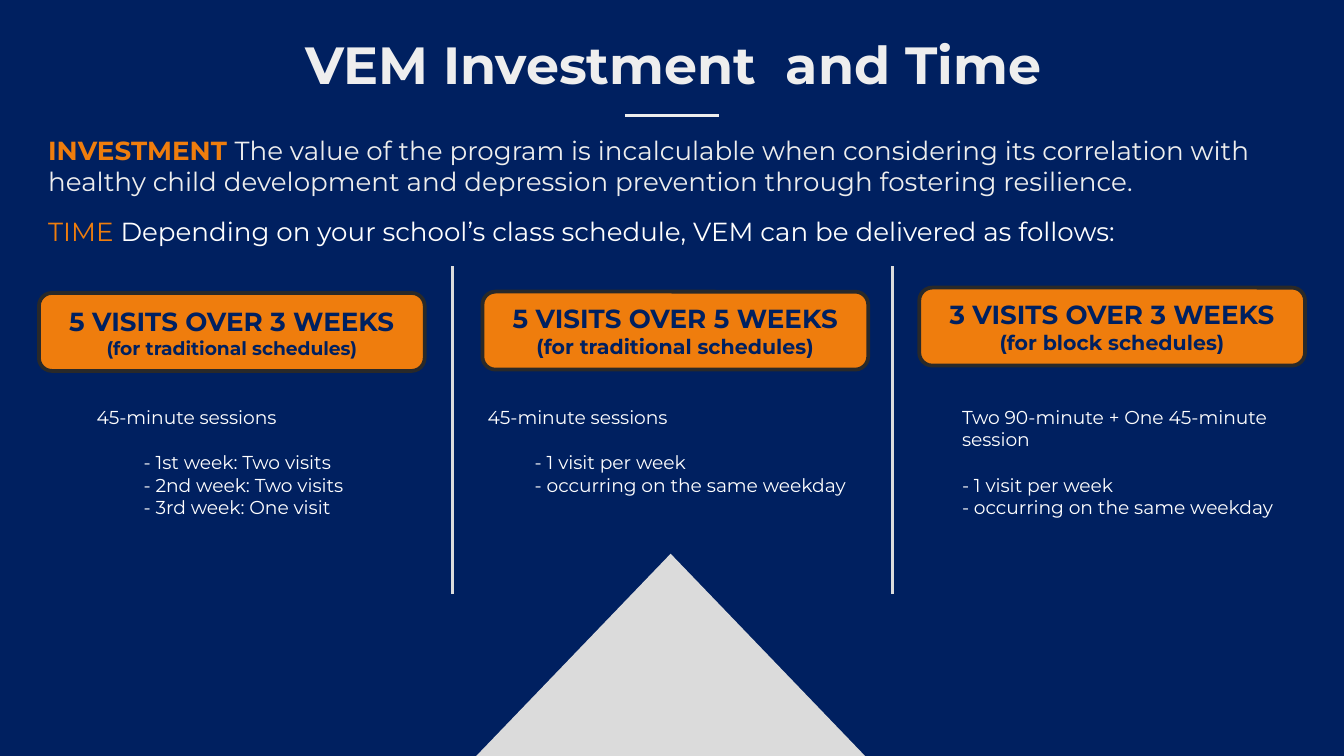
from pptx import Presentation
from pptx.dml.color import RGBColor
from pptx.enum.shapes import MSO_CONNECTOR, MSO_SHAPE
from pptx.enum.text import MSO_ANCHOR, MSO_AUTO_SIZE, PP_ALIGN
from pptx.oxml.ns import qn
from pptx.util import Pt
from lxml import etree

NAVY = RGBColor(0x00, 0x20, 0x60)
ORANGE = RGBColor(0xEF, 0x7D, 0x0D)
CHARCOAL = RGBColor(0x29, 0x29, 0x29)
SILVER = RGBColor(0xDB, 0xDB, 0xDB)
OFF_WHITE = RGBColor(0xEE, 0xEE, 0xEE)
WHITE = RGBColor(0xFF, 0xFF, 0xFF)

FONT = "Montserrat"
CENTER = PP_ALIGN.CENTER
LEFT = PP_ALIGN.LEFT
TOP = MSO_ANCHOR.TOP
MIDDLE = MSO_ANCHOR.MIDDLE
NO_AUTOFIT = MSO_AUTO_SIZE.NONE
STRAIGHT = MSO_CONNECTOR.STRAIGHT
TRIANGLE = MSO_SHAPE.ISOSCELES_TRIANGLE
ROUNDED = MSO_SHAPE.ROUNDED_RECTANGLE

INSET = 7.2
BODY_TOP = 210.24
BODY_HEIGHT = 59.04
BODY_INDENT = 10.8
ITEM_INDENT = 36
SECTION_GAP = 12.2

SCHEDULES = [
    {"badge": (20.88, 156.96), "heading": "5 VISITS OVER 3 WEEKS",
     "note": "(for traditional schedules)", "note_size": 10,
     "body": (33.84, 190.8), "item_indent": ITEM_INDENT,
     "sessions": ["45-minute sessions"],
     "items": ["- 1st week: Two visits", "- 2nd week: Two visits",
               "- 3rd week: One visit"]},
    {"badge": (258.48, 156.24), "heading": "5 VISITS OVER 5 WEEKS",
     "note": "(for traditional schedules)", "note_size": 11,
     "body": (243.36, 222.48), "item_indent": ITEM_INDENT,
     "sessions": ["45-minute sessions"],
     "items": ["- 1 visit per week", "- occurring on the same weekday"]},
    {"badge": (492.48, 154.08), "heading": "3 VISITS OVER 3 WEEKS",
     "note": "(for block schedules)", "note_size": 11,
     "body": (497.52, 206.64), "item_indent": BODY_INDENT,
     "sessions": ["Two 90-minute + One 45-minute", "session"],
     "items": ["- 1 visit per week", "- occurring on the same weekday"]},
]


def style_font(font, size, color, bold=False):
    font.name = FONT
    font.size = Pt(size)
    font.bold = bold
    font.color.rgb = color


def setup_frame(tf, anchor=TOP, vertical_inset=INSET):
    tf.word_wrap = True
    tf.auto_size = NO_AUTOFIT
    tf.vertical_anchor = anchor
    tf.margin_left = tf.margin_right = Pt(INSET)
    tf.margin_top = tf.margin_bottom = Pt(vertical_inset)


def add_title(slide, text):
    sp = slide.shapes.title
    sp.left, sp.top, sp.width, sp.height = Pt(25.2), Pt(10.08), Pt(671), Pt(41.76)
    setup_frame(sp.text_frame)
    p = sp.text_frame.paragraphs[0]
    p.text = text
    p.alignment = CENTER
    style_font(p.font, 28, OFF_WHITE, True)


def add_filled_shape(slide, kind, left, top, width, height, fill):
    sp = slide.shapes.add_shape(kind, Pt(left), Pt(top), Pt(width), Pt(height))
    sp.shadow.inherit = False
    sp.fill.solid()
    sp.fill.fore_color.rgb = fill
    sp.line.fill.background()
    return sp


def add_line(slide, x1, y1, x2, y2, color):
    line = slide.shapes.add_connector(STRAIGHT, Pt(x1), Pt(y1), Pt(x2), Pt(y2))
    line.line.color.rgb = color
    line.line.width = Pt(1.5)
    etree.SubElement(line._element.spPr, qn("a:effectLst"))


def add_textbox(slide, left, top, width, height, vertical_inset=INSET):
    sp = slide.shapes.add_textbox(Pt(left), Pt(top), Pt(width), Pt(height))
    setup_frame(sp.text_frame, vertical_inset=vertical_inset)
    return sp.text_frame


def add_statement(tf, label, text, color, label_bold):
    p = tf.paragraphs[0]
    for content, tint, bold in ((label, ORANGE, label_bold), (text, color, False)):
        r = p.add_run()
        r.text = content
        style_font(r.font, 14, tint, bold)


def add_badge(slide, schedule):
    left, top = schedule["badge"]
    sp = add_filled_shape(slide, ROUNDED, left, top, 206.64, 41.76, ORANGE)
    sp.line.color.rgb = CHARCOAL
    sp.line.width = Pt(2)
    tf = sp.text_frame
    setup_frame(tf, MIDDLE, 0)
    tf.text = schedule["heading"] + "\n" + schedule["note"]
    for p, size in zip(tf.paragraphs, (14, schedule["note_size"])):
        p.alignment = CENTER
        style_font(p.font, size, NAVY, True)


def add_schedule_body(slide, schedule):
    left, width = schedule["body"]
    tf = add_textbox(slide, left, BODY_TOP, width, BODY_HEIGHT)
    sessions, items = schedule["sessions"], schedule["items"]
    tf.text = "\n".join(sessions + items)
    for i, p in enumerate(tf.paragraphs):
        indent = BODY_INDENT if i < len(sessions) else schedule["item_indent"]
        p._p.get_or_add_pPr().set("marL", str(Pt(indent)))
        p.alignment = LEFT
        if i == len(sessions):
            p.space_before = Pt(SECTION_GAP)
        style_font(p.font, 10, WHITE)


def main():
    prs = Presentation()
    prs.slide_width, prs.slide_height = Pt(720), Pt(405)
    slide = prs.slides.add_slide(prs.slide_layouts[5])
    slide.background.fill.solid()
    slide.background.fill.fore_color.rgb = NAVY

    add_filled_shape(slide, TRIANGLE, 252, 296.64, 214.56, 111.6, SILVER)
    add_title(slide, "VEM Investment  and Time")
    add_line(slide, 334.8, 61.92, 385.2, 61.92, OFF_WHITE)

    investment = add_textbox(slide, 18.72, 64.8, 671, 41.76)
    add_statement(
        investment, "INVESTMENT ",
        "The value of the program is incalculable when considering its "
        "correlation with healthy child development and depression "
        "prevention through fostering resilience.", OFF_WHITE, True)
    time = add_textbox(slide, 18.72, 111.6, 615.6, 24.48, 3.6)
    add_statement(
        time, "TIME ",
        "Depending on your school’s class schedule, VEM can be delivered "
        "as follows:", WHITE, False)

    for x in (242.64, 478.08):
        add_line(slide, x, 142.56, x, 318.24, SILVER)
    for schedule in SCHEDULES:
        add_badge(slide, schedule)
        add_schedule_body(slide, schedule)

    prs.save("out.pptx")


if __name__ == "__main__":
    main()
